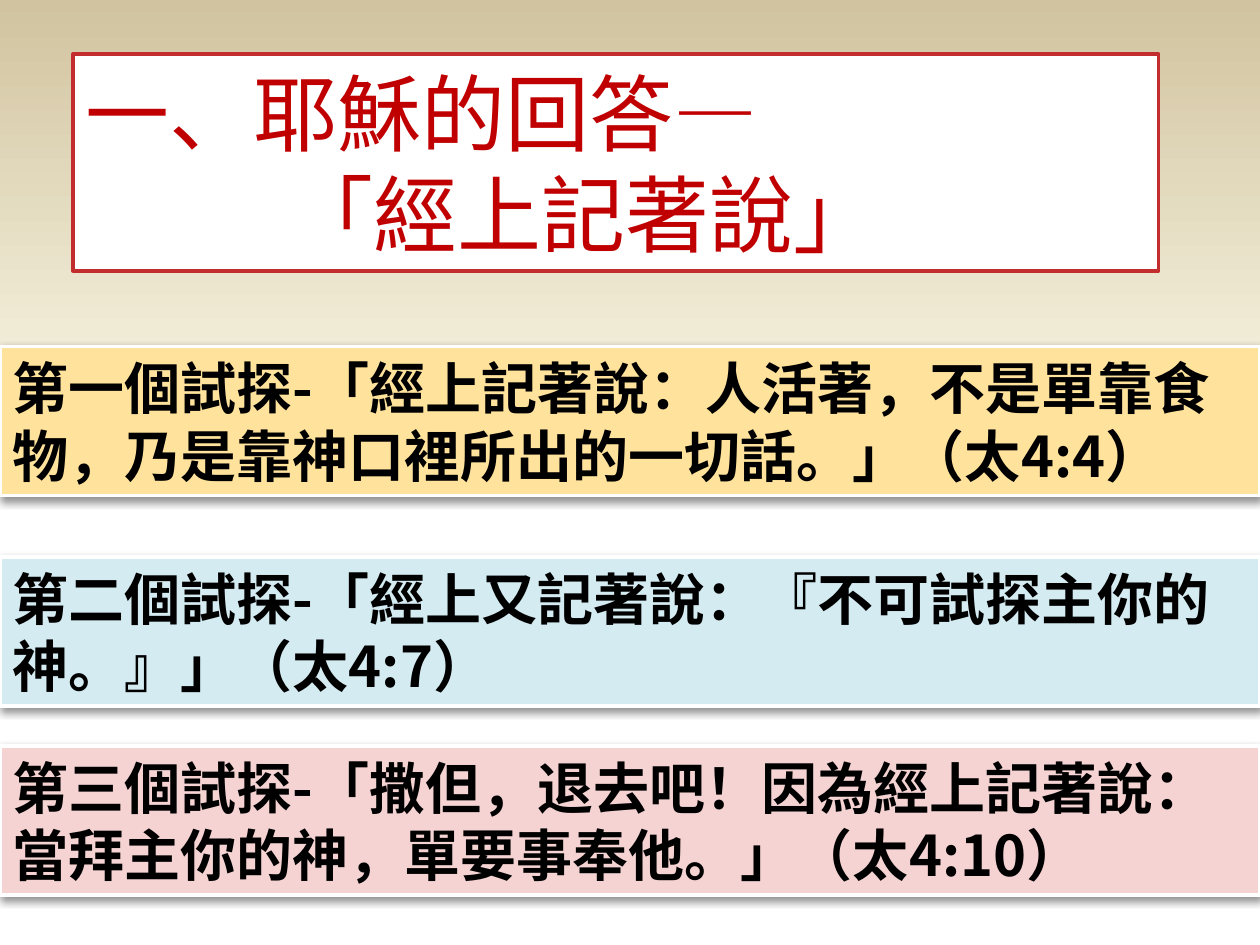
from lxml import etree
from pptx import Presentation
from pptx import util as u
from pptx.dml.color import RGBColor
from pptx.enum import shapes, text
from pptx.oxml import ns

# Content
HEADING = ["一、耶穌的回答—", "「經上記著說」"]
HEADING_INDENTS = [0, 4.11]
TEMPTATIONS = [
    (6.99, "first", ["第一個試探-「經上記著說：人活著，不是單靠食物，乃是靠神口裡所出的一切話。」（太4:4）"]),
    (11.23, "second", ["第二個試探-「經上又記著說：『不可試探主你的神。』」（太4:7）"]),
    (15.04, "third", ["第三個試探-「撒但，退去吧！因為經上記著說：",
                      "當拜主你的神，單要事奉他。」（太4:10）"]),
]

THEME = {
    "heading": {"font": "Lato", "size": 48, "color": "C00000", "bold": False},
    "verse": {"font": "Noto Sans CJK SC", "size": 32, "color": "000000", "bold": True},
    "heading_fill": "FFFFFF", "heading_line": "C32D2E", "verse_line": "FFFFFF",
    "first": "FFE39D", "second": "D4EBF1", "third": "F5D3D3",
    "backdrop": [(50, "FFFFFF"), (65, "F0EBD5"), (100, "D1C39F")],
}
WIDTH, HEIGHT = u.Cm(25.4), u.Cm(19.05)


def rgb(code):
    return RGBColor.from_string(code)


def add_color(parent, code):
    return etree.SubElement(parent, ns.qn("a:srgbClr"), val=code)


def paint_backdrop(slide):
    fill = slide.background.fill
    fill.gradient()
    fill.gradient_angle = 90
    stops = slide.element.find(".//" + ns.qn("a:gsLst"))
    for stop in list(stops):
        stops.remove(stop)
    for position, code in THEME["backdrop"]:
        add_color(etree.SubElement(stops, ns.qn("a:gs"), pos=str(position * 1000)), code)


def add_panel(slide, box, fill, line, paragraphs, style, indents):
    panel = slide.shapes.add_shape(shapes.MSO_SHAPE.RECTANGLE, *box)
    panel.shadow.inherit = False
    panel.fill.solid()
    panel.fill.fore_color.rgb = rgb(fill)
    panel.line.color.rgb = rgb(line)
    panel.line.width = u.Pt(2)
    frame = panel.text_frame
    frame.word_wrap = True
    frame.vertical_anchor = text.MSO_ANCHOR.MIDDLE
    for i, (wording, indent) in enumerate(zip(paragraphs, indents)):
        paragraph = frame.paragraphs[0] if i == 0 else frame.add_paragraph()
        paragraph.alignment = text.PP_ALIGN.LEFT
        if indent:
            paragraph._p.get_or_add_pPr().set("marL", str(u.Cm(indent)))
        run = paragraph.add_run()
        run.text = wording
        run.font.name = style["font"]
        run.font.size = u.Pt(style["size"])
        run.font.bold = style["bold"]
        run.font.color.rgb = rgb(style["color"])
    return panel


def add_soft_shadow(panel):
    effects = panel.element.spPr.find(ns.qn("a:effectLst"))
    shadow = etree.SubElement(effects, ns.qn("a:outerShdw"), blurRad=str(u.Pt(5)),
                              dist=str(u.Pt(2)), dir="5400000", rotWithShape="0")
    etree.SubElement(add_color(shadow, "000000"), ns.qn("a:alpha"), val="43000")


def main():
    deck = Presentation()
    deck.slide_width, deck.slide_height = WIDTH, HEIGHT
    slide = deck.slides.add_slide(deck.slide_layouts[6])
    paint_backdrop(slide)

    # Heading
    heading_box = (u.Cm(1.47), u.Cm(1.09), u.Cm(21.89), u.Cm(4.37))
    add_panel(slide, heading_box, THEME["heading_fill"], THEME["heading_line"],
              HEADING, THEME["heading"], HEADING_INDENTS)

    # One full-width band for each temptation
    for top, fill, verses in TEMPTATIONS:
        band = add_panel(slide, (0, u.Cm(top), WIDTH, u.Cm(3)), THEME[fill],
                         THEME["verse_line"], verses, THEME["verse"], [0] * len(verses))
        add_soft_shadow(band)

    deck.save("out.pptx")


if __name__ == "__main__":
    main()
